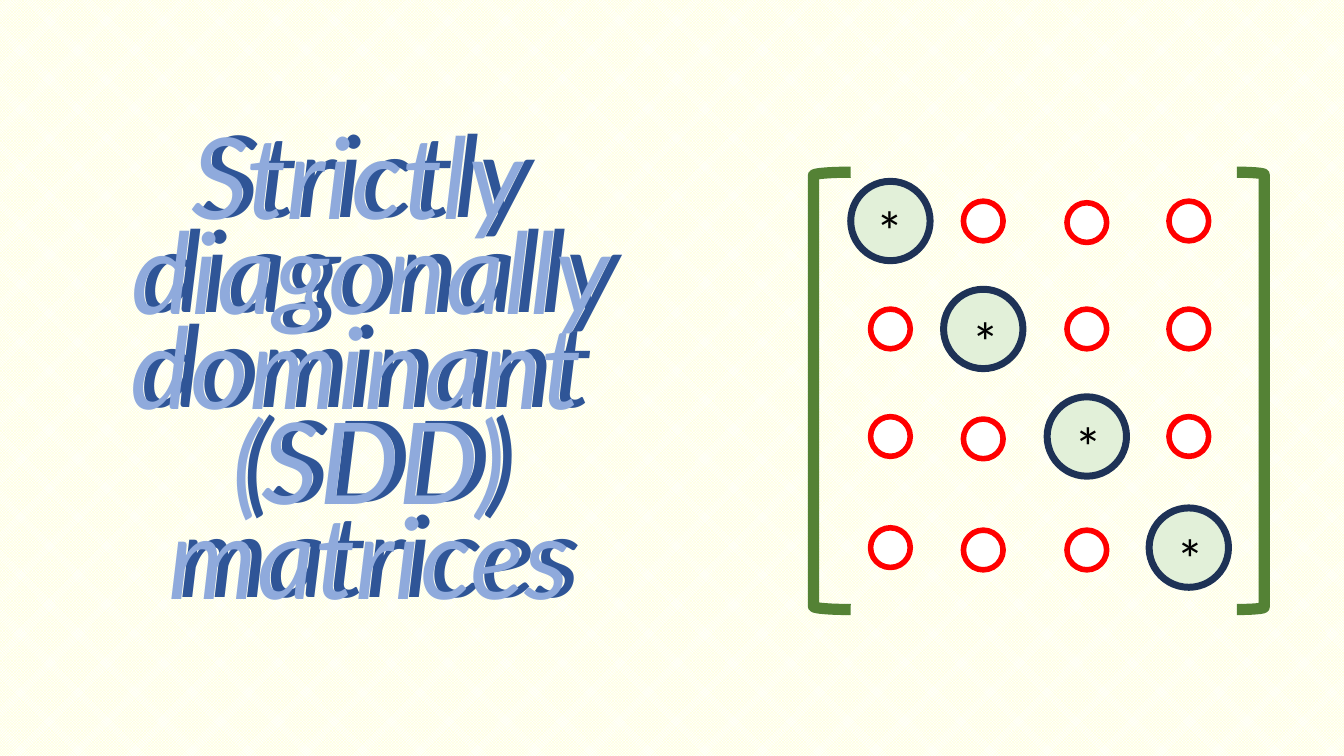
"""Build a slide on strictly diagonally dominant matrices."""
import pptx
import pptx.util
import pptx.dml.color
import pptx.enum.dml
import pptx.enum.shapes
import pptx.enum.text

Cm, Pt = pptx.util.Cm, pptx.util.Pt
Rgb = pptx.dml.color.RGBColor.from_string
Kind = pptx.enum.shapes.MSO_SHAPE
Align, Anchor = pptx.enum.text.PP_ALIGN, pptx.enum.text.MSO_ANCHOR
Fit = pptx.enum.text.MSO_AUTO_SIZE

TITLE = ["Strictly ", "diagonally dominant ", "(SDD)", "matrices"]
BACK, FRONT = (0.25, 2.26), (-0.03, 2.31)
COLS = [22.44, 24.78, 27.39, 29.96]
ROWS = [5.57, 8.29, 11.0, 13.8]
DROPS = {(0, 2): 0.04, (2, 1): 0.06, (3, 1): 0.06, (3, 2): 0.06}
STARS = [(21.82, 4.8), (24.23, 7.59), (26.82, 10.24), (29.39, 13.08)]
ENDS = [(Kind.RIGHT_BRACKET, 31.17, 0.69), (Kind.LEFT_BRACKET, 20.5, 0.94)]

THEME = {
    "paper": ("FFFFCC", "FFFFFF"),
    "disc": {"size": 2.0, "fill": "E2F0D9", "line": "1E3256", "width": 5},
    "ring": {"size": 1.0, "fill": "FFFFFF", "line": "FF0000", "width": 4},
    "end": {"fill": None, "line": "548235", "width": 8},
    "back": {"name": "Lato", "size": Pt(80.8), "italic": True, "color": "2F5597"},
    "front": {"name": "Lato", "size": Pt(80.8), "italic": True, "color": "8FAADC"},
    "star": {"name": "Calibri", "size": Pt(40), "color": "000000"},
}


def put(thing, vals):
    for key, val in vals.items():
        if key == "color":
            thing.color.rgb = Rgb(val)
        else:
            setattr(thing, key, val)


def draw(slide, kind, box, look):
    shape = slide.shapes.add_shape(kind, *map(Cm, box))
    shape.shadow.inherit = False
    if look["fill"]:
        shape.fill.solid()
        shape.fill.fore_color.rgb = Rgb(look["fill"])
    else:
        shape.fill.background()
    put(shape.line, {"color": look["line"], "width": Pt(look["width"])})


def write(slide, box, lines, font, frame, para):
    text = slide.shapes.add_textbox(*map(Cm, box)).text_frame
    put(text, {"word_wrap": True, **frame})
    for num, line in enumerate(lines):
        part = text.add_paragraph() if num else text.paragraphs[0]
        put(part, para)
        run = part.add_run()
        run.text = line
        put(run.font, font)


def title(slide, place, font):
    write(slide, (*place, 18.67, 13.41), TITLE, font,
          {"vertical_anchor": Anchor.BOTTOM},
          {"alignment": Align.CENTER, "line_spacing": 0.7})


def grid(slide):
    for row, mid in enumerate(ROWS):
        for col, x in enumerate(COLS):
            look = THEME["disc" if row == col else "ring"]
            size = look["size"]
            y = mid + DROPS.get((row, col), 0)
            draw(slide, Kind.OVAL, (x - size / 2, y - size / 2, size, size), look)


def main():
    deck = pptx.Presentation()
    put(deck, {"slide_width": Cm(33.87), "slide_height": Cm(19.05)})
    slide = deck.slides.add_slide(deck.slide_layouts[6])
    paper = slide.background.fill
    paper.patterned()
    paper.pattern = pptx.enum.dml.MSO_PATTERN.SMALL_CHECKER_BOARD
    paper.fore_color.rgb, paper.back_color.rgb = map(Rgb, THEME["paper"])
    title(slide, BACK, THEME["back"])
    grid(slide)
    for kind, left, width in ENDS:
        draw(slide, kind, (left, 4.34, width, 11.02), THEME["end"])
    for place in STARS:
        write(slide, (*place, 1.57, 1.96), ["*"], THEME["star"],
              {"auto_size": Fit.SHAPE_TO_FIT_TEXT}, {})
    title(slide, FRONT, THEME["front"])
    deck.save("out.pptx")


if __name__ == "__main__":
    main()
